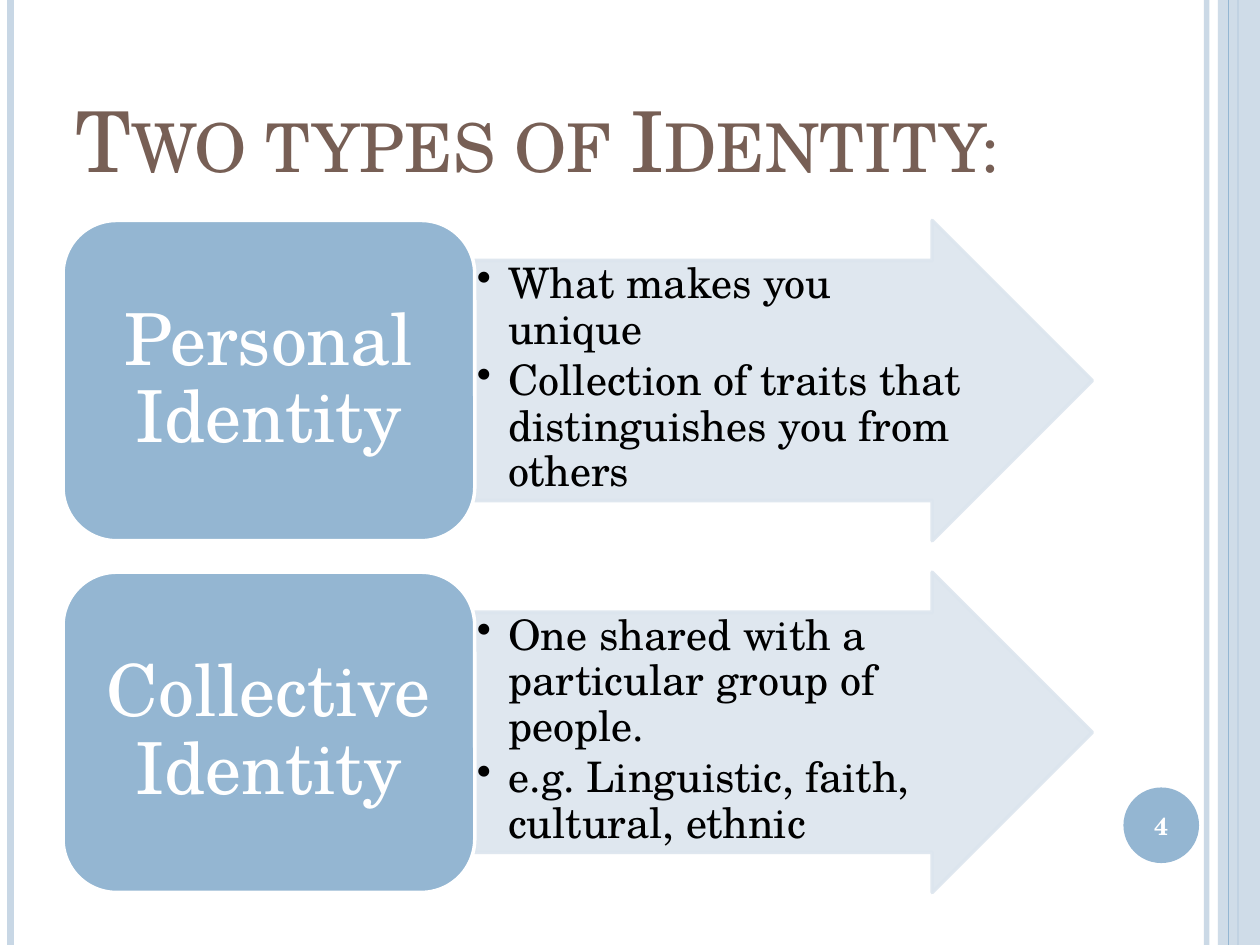
import pptx
import pptx.util
import pptx.dml.color
import pptx.enum.shapes
import pptx.enum.text
import pptx.oxml
import pptx.oxml.ns
from lxml import etree

Pt = pptx.util.Pt
Kind = pptx.enum.shapes.MSO_SHAPE
Align = pptx.enum.text.PP_ALIGN
Anchor = pptx.enum.text.MSO_ANCHOR
qn = pptx.oxml.ns.qn

# Content
TITLE = "Two types of Identity:"
NUMBER = "4"
TYPES = [
    ("Personal Identity",
     ["What makes you unique",
      "Collection of traits that distinguishes you from others"]),
    ("Collective Identity",
     ["One shared with a particular group of people.",
      "e.g. Linguistic, faith, cultural, ethnic"]),
]

THEME = {
    "font": "TeX Gyre Schola",
    "blue": "94B6D2", "pale": "C8D7E5", "arrow": "DCE5EE",
    "brown": "775F55", "white": "FFFFFF", "black": "000000",
    "title": 48, "label": 41, "point": 24, "number": 14,
}

# Layout in points
WIDE, HIGH = 720, 540
LEFT, TOP, ROW, STEP = 36, 126, 183, 201
BOX, ARROW = 235.3, 352.9
# Edge rules: x, colour, weight, opacity in percent
BACK = [(689.5, "pale", 3, 93), (6, "pale", 4.5, 100), (707.5, "blue", 1.5, 100)]
FRONT = [(702, "blue", 0.75, 100)]
BAND = (696, 0, 24, HIGH)
BADGE = (642, 450, 43.2, 43.2)


def paint(fill, name, alpha=100):
    fill.solid()
    fill.fore_color.rgb = pptx.dml.color.RGBColor.from_string(THEME[name])
    if alpha < 100:
        tone = fill._xPr.find(qn("a:solidFill"))[0]
        etree.SubElement(tone, qn("a:alpha"), val=str(alpha * 1000))


def rule(slide, x, name, weight, alpha):
    line = slide.shapes.add_connector(
        pptx.enum.shapes.MSO_CONNECTOR.STRAIGHT, Pt(x), 0, Pt(x), Pt(HIGH))
    paint(line.line.fill, name, alpha)
    line.line.width = Pt(weight)
    etree.SubElement(line._element.spPr, qn("a:effectLst"))


def block(slide, kind, place, name, alpha=100, edge=None):
    shape = slide.shapes.add_shape(kind, *map(Pt, place))
    shape.shadow.inherit = False
    paint(shape.fill, name, alpha)
    if edge:
        paint(shape.line.fill, edge, alpha)
        shape.line.width = Pt(2)
    else:
        shape.line.fill.background()
    return shape


def write(shape, texts, size, name, align, anchor, pad=(0, 0), bold=False):
    frame = shape.text_frame
    frame.word_wrap = True
    frame.auto_size = pptx.enum.text.MSO_AUTO_SIZE.NONE
    frame.vertical_anchor = anchor
    frame.margin_left = frame.margin_right = Pt(pad[0])
    frame.margin_top = frame.margin_bottom = Pt(pad[1])
    frame.text = "\n".join(texts)
    for para in frame.paragraphs:
        para.alignment = align
        para.font.name = THEME["font"]
        para.font.size = Pt(THEME[size])
        para.font.bold = bold
        paint(para.font.fill, name)
    return frame.paragraphs


def bullet(para):
    props = para._p.get_or_add_pPr()
    props.set("marL", str(Pt(18)))
    props.set("indent", str(-Pt(18)))
    etree.SubElement(props, qn("a:buChar"), char="•")
    # Bullet must come before the default run properties
    base = props.find(qn("a:defRPr"))
    if base is not None:
        props.append(base)


def main():
    deck = pptx.Presentation()
    deck.slide_width, deck.slide_height = Pt(WIDE), Pt(HIGH)
    slide = deck.slides.add_slide(deck.slide_layouts[5])

    # Edge decoration and number badge
    for item in BACK:
        rule(slide, *item)
    block(slide, Kind.RECTANGLE, BAND, "pale", 87)
    for item in FRONT:
        rule(slide, *item)
    badge = block(slide, Kind.OVAL, BADGE, "blue")
    write(badge, [NUMBER], "number", "white", Align.CENTER, Anchor.MIDDLE, bold=True)

    # Title in small caps
    title = slide.shapes.title
    title.left, title.top, title.width, title.height = map(Pt, (36, 21.6, 588, 90))
    head = write(title, [TITLE], "title", "brown", Align.LEFT, Anchor.BOTTOM, (7.2, 3.6))
    head[0].runs[0].font._element.set("cap", "small")

    # One label and one arrow of points per type
    for row, (label, points) in enumerate(TYPES):
        y = TOP + row * STEP
        arrow = block(slide, Kind.RIGHT_ARROW, (LEFT + BOX, y, ARROW, ROW),
                      "arrow", 90, "arrow")
        arrow.adjustments[0], arrow.adjustments[1] = 0.75, 0.5
        for para in write(arrow, points, "point", "black", Align.LEFT,
                          Anchor.TOP, (1.2, 1.2)):
            para.line_spacing = 0.9
            para.space_after = Pt(3.6)
            bullet(para)
        box = block(slide, Kind.ROUNDED_RECTANGLE, (LEFT, y, BOX, ROW),
                    "blue", edge="white")
        para = write(box, [label], "label", "white", Align.CENTER,
                     Anchor.MIDDLE, (12.3, 6.2))[0]
        para.line_spacing = 0.9

    deck.save("out.pptx")


if __name__ == "__main__":
    main()
